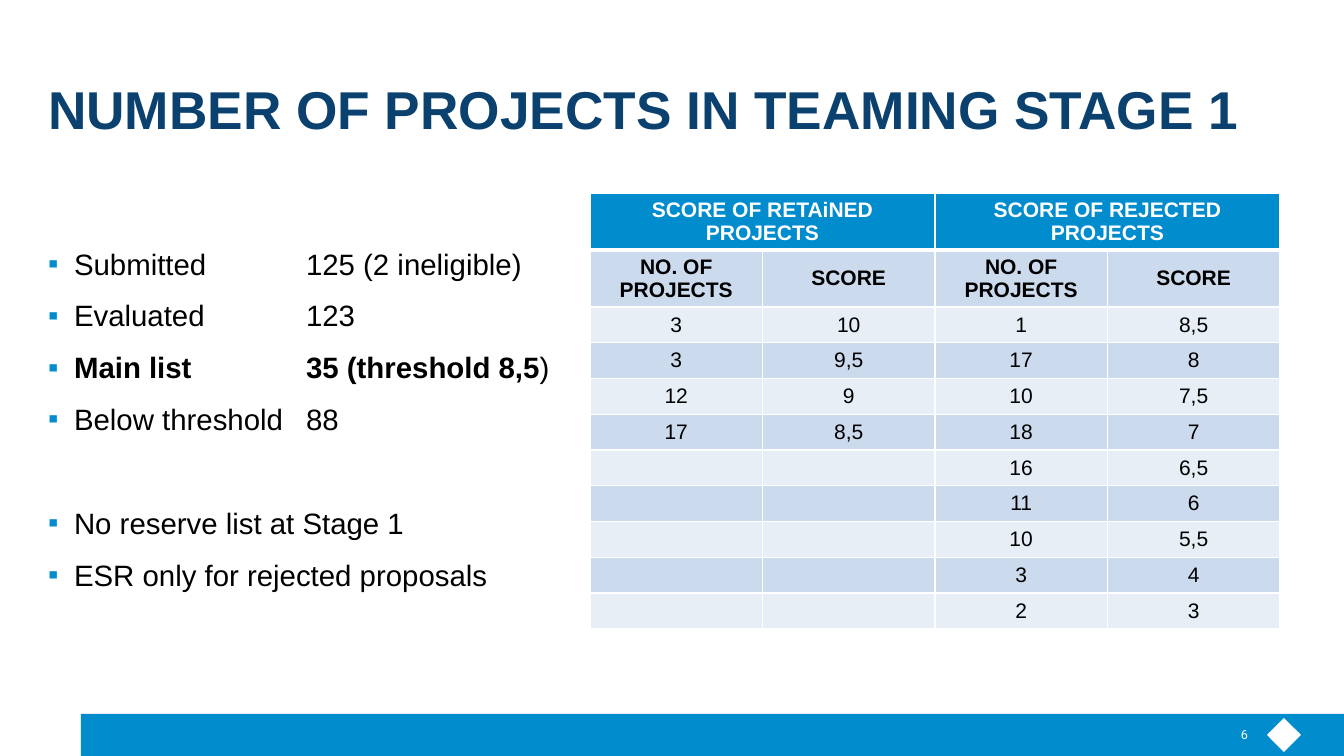
"""Build the slide on project numbers and scores in Teaming Stage 1."""
from dataclasses import dataclass

from lxml.etree import SubElement
from pptx import Presentation
from pptx.dml.color import RGBColor
from pptx.enum.shapes import MSO_SHAPE
from pptx.enum.text import MSO_ANCHOR, MSO_AUTO_SIZE, PP_ALIGN
from pptx.oxml.ns import qn
from pptx.util import Emu, Pt


@dataclass
class Theme:
    blue: str = "008CCD"
    navy: str = "0A416E"
    black: str = "000000"
    white: str = "FFFFFF"
    bands: tuple = ("E7EEF6", "CCDAED")
    font: str = "Arial"
    small_font: str = "Roboto"
    title: int = 38
    body: int = 21
    cell: int = 15
    page: int = 9


theme = Theme()


def px(count):
    return Emu(round(count * 914400 / 100.8))


def add_run(para, text, size, color, bold=False, font=theme.font):
    run = para.add_run()
    run.text = text
    run.font.name = font
    run.font.size = Pt(size)
    run.font.bold = bold
    run.font.color.rgb = RGBColor.from_string(color)


deck = Presentation()
deck.slide_width, deck.slide_height = px(1344), px(756)
slide = deck.slides.add_slide(deck.slide_layouts[1])
shapes = slide.shapes

for kind, box, color in (
    (MSO_SHAPE.RECTANGLE, (81, 714, 1263, 42), theme.blue),
    (MSO_SHAPE.DIAMOND, (1267, 718, 34, 34), theme.white),
):
    shape = shapes.add_shape(kind, *map(px, box))
    shape.shadow.inherit = False
    shape.fill.solid()
    shape.fill.fore_color.rgb = RGBColor.from_string(color)
    shape.line.fill.background()

title = shapes.title
body = slide.placeholders[1]
page = shapes.add_textbox(0, 0, 0, 0)
for holder, box, anchor in (
    (title, (48, 86, 1216, 54), MSO_ANCHOR.BOTTOM),
    (body, (48, 246, 530, 400), MSO_ANCHOR.TOP),
    (page, (1191, 727, 57, 15), MSO_ANCHOR.MIDDLE),
):
    holder.left, holder.top, holder.width, holder.height = map(px, box)
    frame = holder.text_frame
    frame.margin_left = frame.margin_right = 0
    frame.margin_top = frame.margin_bottom = 0
    frame.vertical_anchor = anchor
    frame.word_wrap = True
    frame.auto_size = MSO_AUTO_SIZE.NONE

para = title.text_frame.paragraphs[0]
para.alignment = PP_ALIGN.LEFT
para.line_spacing = 0.85
add_run(para, "NUMBER OF PROJECTS IN TEAMING STAGE 1", theme.title, theme.navy, True)

para = page.text_frame.paragraphs[0]
para.alignment = PP_ALIGN.RIGHT
add_run(para, "6", theme.page, theme.white, font=theme.small_font)

points = (
    (0, [("Submitted\t125 (2 ineligible)", False)]),
    (6, [("Evaluated\t123", False)]),
    (6, [("Main list\t35 (threshold 8,5", True), (")", False)]),
    (6, [("Below threshold\t88", False)]),
    (43, [("No reserve list at Stage 1", False)]),
    (6, [("ESR only for rejected proposals", False)]),
)
frame = body.text_frame
for index, (before, parts) in enumerate(points):
    para = frame.add_paragraph() if index else frame.paragraphs[0]
    para.alignment = PP_ALIGN.LEFT
    para.line_spacing = Pt(25)
    para.space_before = Pt(before)
    para.space_after = Pt(6)
    props = para._p.get_or_add_pPr()
    props.set("marL", str(px(26)))
    props.set("indent", str(-px(26)))
    tint = SubElement(props, qn("a:buClr"))
    SubElement(tint, qn("a:srgbClr"), val=theme.blue)
    SubElement(props, qn("a:buFont"), typeface=theme.font)
    SubElement(props, qn("a:buChar"), char="▪")
    tabs = SubElement(props, qn("a:tabLst"))
    SubElement(tabs, qn("a:tab"), pos=str(px(258)), algn="l")
    for text, bold in parts:
        add_run(para, text, theme.body, theme.black, bold)

rows = (
    ("SCORE OF RETAiNED PROJECTS", "", "SCORE OF REJECTED PROJECTS", ""),
    ("NO. OF PROJECTS", "SCORE") * 2,
    ("3", "10", "1", "8,5"),
    ("3", "9,5", "17", "8"),
    ("12", "9", "10", "7,5"),
    ("17", "8,5", "18", "7"),
    ("", "", "16", "6,5"),
    ("", "", "11", "6"),
    ("", "", "10", "5,5"),
    ("", "", "3", "4"),
    ("", "", "2", "3"),
)
grid = shapes.add_table(len(rows), 4, *map(px, (590, 193, 690, 435))).table
for row, texts in enumerate(rows):
    head = row == 0
    grid.rows[row].height = px(57 if row < 2 else 322 / 9)
    for col, text in enumerate(texts):
        cell = grid.cell(row, col)
        cell.margin_top = cell.margin_bottom = px(3)
        cell.vertical_anchor = MSO_ANCHOR.MIDDLE
        props = cell._tc.get_or_add_tcPr()
        for side in "LRTB":
            width = Pt(3 if head and side == "B" else 1)
            edge = SubElement(props, qn(f"a:ln{side}"), w=str(width))
            paint = SubElement(edge, qn("a:solidFill"))
            SubElement(paint, qn("a:srgbClr"), val=theme.white)
        cell.fill.solid()
        color = theme.blue if head else theme.bands[row % 2]
        cell.fill.fore_color.rgb = RGBColor.from_string(color)
        para = cell.text_frame.paragraphs[0]
        para.alignment = PP_ALIGN.CENTER
        if text:
            ink = theme.white if head else theme.black
            add_run(para, text, theme.cell, ink, row < 2)
        else:
            SubElement(para._p, qn("a:endParaRPr"), sz=str(theme.cell * 100))
for col in (0, 2):
    grid.cell(0, col).merge(grid.cell(0, col + 1))

deck.save("out.pptx")
